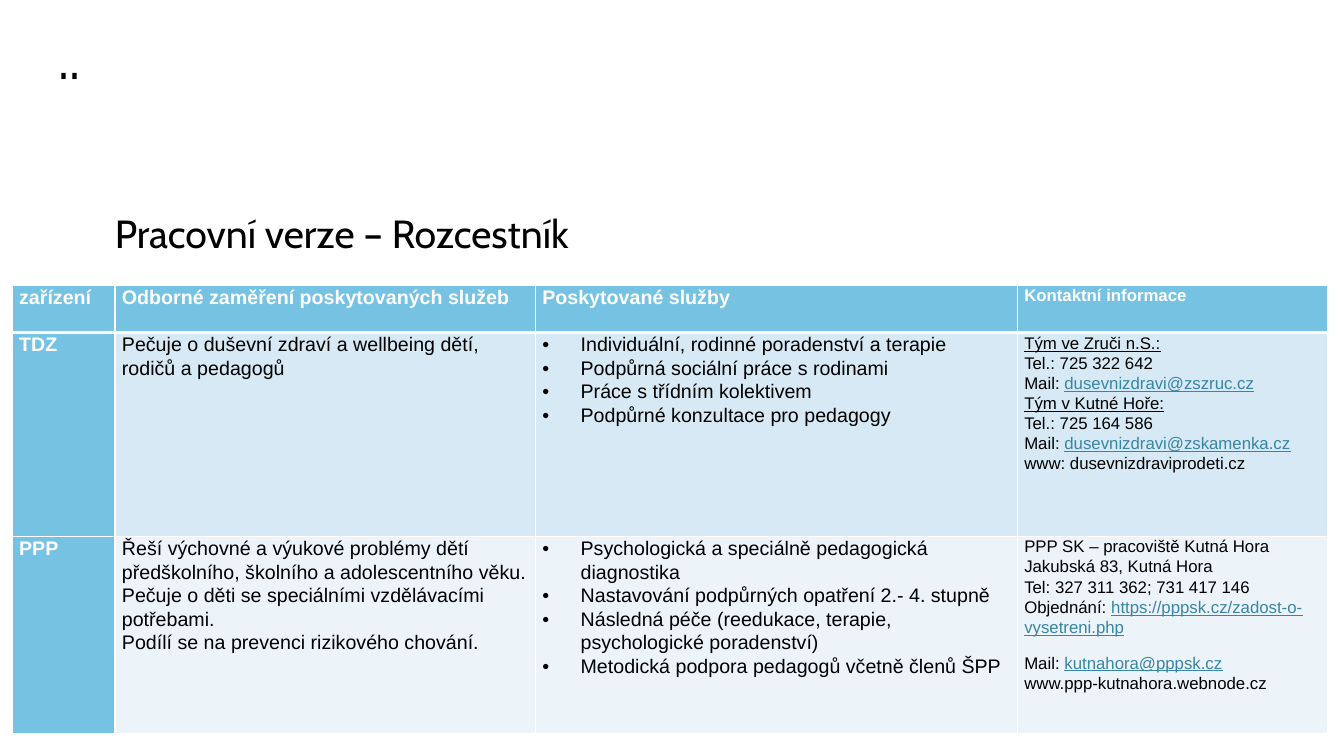
from dataclasses import dataclass

from lxml.etree import SubElement
from pptx import Presentation
from pptx.dml.color import RGBColor
from pptx.enum.text import MSO_ANCHOR as Anchor
from pptx.oxml.ns import qn
from pptx.util import Emu, Pt

PX = 9144  # 100 px to the inch


def px(length: int) -> Emu:
    return Emu(length * PX)


@dataclass(frozen=True)
class Theme:
    heading_font: str = "Cabin"
    table_font: str = "Arial"
    ink: str = "000000"
    white: str = "FFFFFF"
    link: str = "3885A5"
    accent: str = "76C2E3"
    bands: tuple[str, ...] = ("D6E9F4", "ECF4FA")
    title_size: int = 44
    subtitle_size: int = 28
    table_size: int = 14
    contact_size: int = 12
    heading_spacing: float = 0.9
    table_spacing: float = 1.07
    rule: int = 1
    header_rule: int = 3


@dataclass(frozen=True)
class Line:
    text: str
    link: str = ""
    underlined: bool = False
    bullet: bool = False
    gap_after: float = 0


@dataclass(frozen=True)
class Heading:
    text: str
    left: int
    top: int
    width: int
    height: int
    size: int
    anchor: Anchor
    indent: int = 0


@dataclass(frozen=True)
class Facility:
    name: str
    focus: tuple[str, ...]
    services: tuple[str, ...]
    contacts: tuple[Line, ...]


THEME = Theme()

# Content
HEADINGS = (
    Heading("¨", 46, 23, 1150, 145, THEME.title_size, Anchor.MIDDLE),
    Heading("Pracovní verze – Rozcestník", 92, 208, 1150, 476,
            THEME.subtitle_size, Anchor.TOP, indent=12),
)
COLUMN_TITLES = ("zařízení", "Odborné zaměření poskytovaných služeb",
                 "Poskytované služby", "Kontaktní informace")
FACILITIES = (
    Facility(
        "TDZ",
        ("Pečuje o duševní zdraví a wellbeing dětí, rodičů a pedagogů",),
        ("Individuální, rodinné poradenství a terapie",
         "Podpůrná sociální práce s rodinami",
         "Práce s třídním kolektivem",
         "Podpůrné konzultace pro pedagogy"),
        (Line("Tým ve Zruči n.S.:", underlined=True),
         Line("Tel.: 725 322 642"),
         Line("Mail: ", link="dusevnizdravi@zszruc.cz"),
         Line("Tým v Kutné Hoře:", underlined=True),
         Line("Tel.: 725 164 586"),
         Line("Mail: ", link="dusevnizdravi@zskamenka.cz"),
         Line("www: dusevnizdraviprodeti.cz")),
    ),
    Facility(
        "PPP",
        ("Řeší výchovné a výukové problémy dětí předškolního, školního "
         "a adolescentního věku.",
         "Pečuje o děti se speciálními vzdělávacími potřebami.",
         "Podílí se na prevenci rizikového chování."),
        ("Psychologická a speciálně pedagogická diagnostika",
         "Nastavování podpůrných opatření 2.- 4. stupně",
         "Následná péče (reedukace, terapie, psychologické poradenství)",
         "Metodická podpora pedagogů včetně členů ŠPP"),
        (Line("PPP SK – pracoviště Kutná Hora"),
         Line("Jakubská 83, Kutná Hora"),
         Line("Tel: 327 311 362; 731 417 146"),
         Line("Objednání: ", link="https://pppsk.cz/zadost-o-vysetreni.php",
              gap_after=11.2),
         Line("Mail: ", link="kutnahora@pppsk.cz"),
         Line("www.ppp-kutnahora.webnode.cz")),
    ),
)

# Table geometry
TABLE_LEFT, TABLE_TOP = 12, 283
COLUMN_WIDTHS = (102, 417, 478, 308)
ROW_HEIGHTS = (47, 202, 196)
CELL_INSET = 7
BULLET_INDENT = 38


def style_span(span, font: str, size: int, color: str, bold: bool = False,
               underlined: bool = False) -> None:
    span.font.name = font
    span.font.size = Pt(size)
    span.font.bold = bold
    span.font.underline = underlined
    span.font.color.rgb = RGBColor.from_string(color)


def indent_para(para, left: int, first: int = 0) -> None:
    properties = para._p.get_or_add_pPr()
    properties.set("marL", str(px(left)))
    properties.set("indent", str(px(first)))


def add_bullet(para) -> None:
    indent_para(para, BULLET_INDENT, -BULLET_INDENT)
    properties = para._p.get_or_add_pPr()
    SubElement(properties, qn("a:buFont"), typeface=THEME.table_font)
    SubElement(properties, qn("a:buChar"), char="•")


def add_heading(page, heading: Heading) -> None:
    box = page.shapes.add_textbox(px(heading.left), px(heading.top),
                                  px(heading.width), px(heading.height))
    frame = box.text_frame
    frame.word_wrap = True
    frame.vertical_anchor = heading.anchor
    frame.text = heading.text
    para = frame.paragraphs[0]
    indent_para(para, heading.indent)
    para.line_spacing = THEME.heading_spacing
    style_span(para.runs[0], THEME.heading_font, heading.size, THEME.ink)


def add_borders(cell, top: int, bottom: int) -> None:
    widths = {"a:lnL": THEME.rule, "a:lnR": THEME.rule, "a:lnT": top, "a:lnB": bottom}
    for side, width in widths.items():
        border = SubElement(cell._tc.get_or_add_tcPr(), qn(side), w=str(Pt(width)))
        fill = SubElement(border, qn("a:solidFill"))
        SubElement(fill, qn("a:srgbClr"), val=THEME.white)


def fill_cell(cell, lines: tuple[Line, ...], size: int, fill: str,
              label: bool = False) -> None:
    cell.margin_left = cell.margin_right = px(CELL_INSET)
    cell.margin_top = cell.margin_bottom = 0
    cell.fill.solid()
    cell.fill.fore_color.rgb = RGBColor.from_string(fill)
    color = THEME.white if label else THEME.ink
    frame = cell.text_frame
    for index, line in enumerate(lines):
        para = frame.add_paragraph() if index else frame.paragraphs[0]
        para.text = line.text
        para.line_spacing = THEME.table_spacing
        if line.gap_after:
            para.space_after = Pt(line.gap_after)
        if line.bullet:
            add_bullet(para)
        style_span(para.runs[0], THEME.table_font, size, color, label, line.underlined)
        if line.link:
            span = para.add_run()
            span.text = line.link
            style_span(span, THEME.table_font, size, THEME.link, underlined=True)


def add_facility_table(page) -> None:
    table = page.shapes.add_table(
        len(ROW_HEIGHTS), len(COLUMN_WIDTHS), px(TABLE_LEFT), px(TABLE_TOP),
        px(sum(COLUMN_WIDTHS)), px(sum(ROW_HEIGHTS))).table
    for column, width in zip(table.columns, COLUMN_WIDTHS):
        column.width = px(width)
    for index, (row, height) in enumerate(zip(table.rows, ROW_HEIGHTS)):
        row.height = px(height)
        for cell in row.cells:
            add_borders(cell,
                        top=THEME.header_rule if index == 1 else THEME.rule,
                        bottom=THEME.header_rule if index == 0 else THEME.rule)

    # Column sizes: the contact column is set smaller
    sizes = (THEME.table_size,) * 3 + (THEME.contact_size,)
    for cell, title, size in zip(table.rows[0].cells, COLUMN_TITLES, sizes):
        fill_cell(cell, (Line(title),), size, THEME.accent, label=True)

    for index, (facility, band) in enumerate(zip(FACILITIES, THEME.bands), start=1):
        contents = (
            (Line(facility.name),),
            tuple(Line(text) for text in facility.focus),
            tuple(Line(text, bullet=True) for text in facility.services),
            facility.contacts,
        )
        for column, (lines, size) in enumerate(zip(contents, sizes)):
            label = column == 0
            fill_cell(table.cell(index, column), lines, size,
                      THEME.accent if label else band, label)


def main() -> None:
    deck = Presentation()
    deck.slide_width, deck.slide_height = px(1333), px(750)
    page = deck.slides.add_slide(deck.slide_layouts[6])
    for heading in HEADINGS:
        add_heading(page, heading)
    add_facility_table(page)
    deck.save("out.pptx")


if __name__ == "__main__":
    main()
